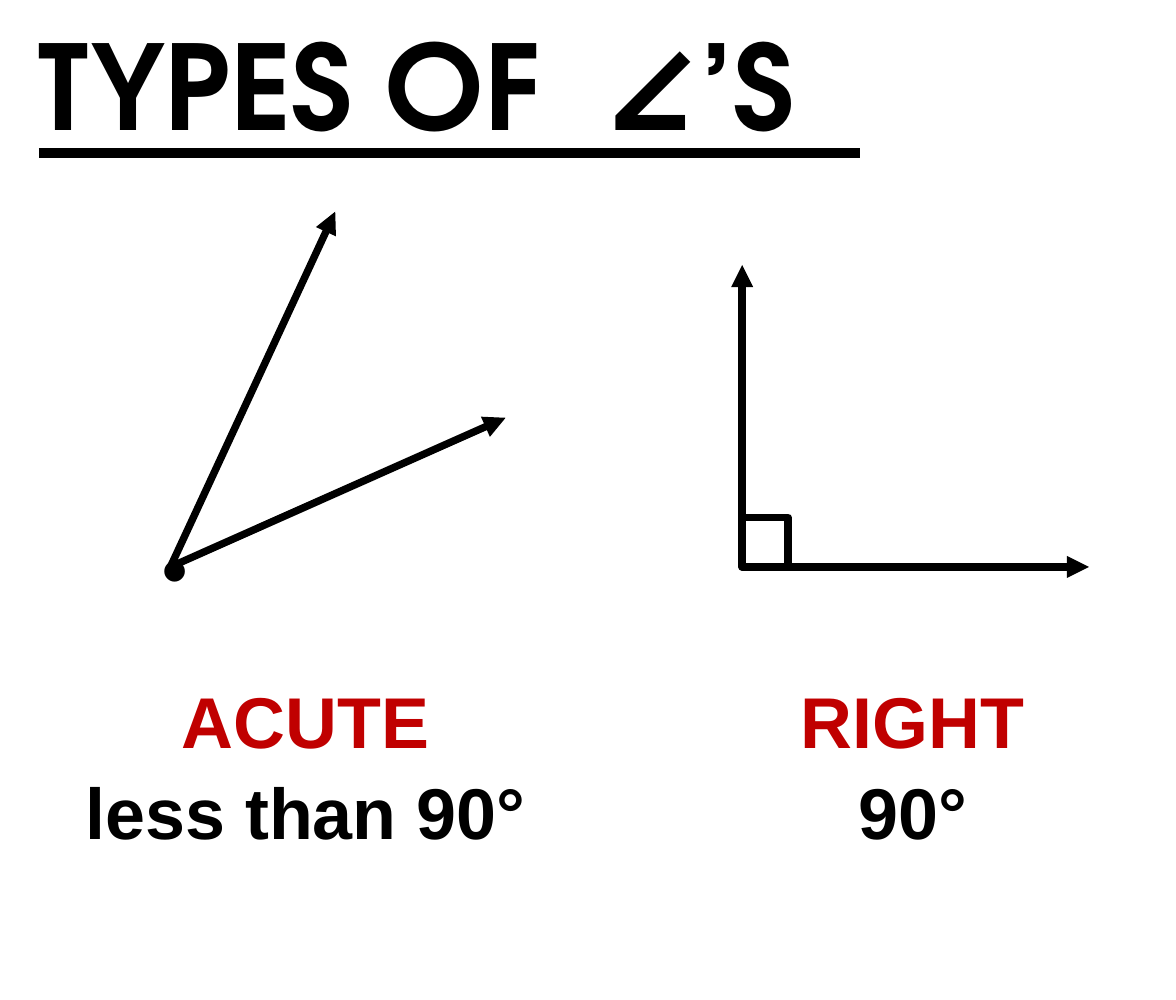
from collections import namedtuple

from lxml import etree
from pptx import Presentation
from pptx import util as u
from pptx.dml.color import RGBColor
from pptx.enum import shapes, text
from pptx.oxml.ns import qn

Box = namedtuple("Box", "left top width height")

BLACK = "000000"
RED = "C00000"
LINE_WIDTH = u.Pt(4.5)
VERTEX_DROP = 7.67  # from the top of a panel to the vertex of its angle
LABEL_DROP = 9.91   # from the top of a panel to its label
LABEL_HEIGHT = 4.01


def colour(hex_value):
    return RGBColor.from_string(hex_value)


def add_text(page, box, lines, font_name, size, wrap=False):
    """Place bold lines, given as (wording, colour) pairs, in a text box."""
    frame = page.shapes.add_textbox(*map(u.Cm, box)).text_frame
    frame.word_wrap = wrap
    for index, (wording, hex_value) in enumerate(lines):
        para = frame.paragraphs[0] if index == 0 else frame.add_paragraph()
        para.text = wording
        para.alignment = text.PP_ALIGN.CENTER
        para.space_before = u.Pt(3)
        para.font.name = font_name
        para.font.size = u.Pt(size)
        para.font.bold = True
        para.font.color.rgb = colour(hex_value)
    return frame


def add_ray(group, start, end):
    """Draw an arrow from the vertex of an angle."""
    ray = group.shapes.add_connector(
        shapes.MSO_CONNECTOR.STRAIGHT, *map(u.Cm, start + end))
    ray.line.color.rgb = colour(BLACK)
    ray.line.width = LINE_WIDTH
    properties = ray._element.spPr
    etree.SubElement(ray.line._get_or_add_ln(), qn("a:tailEnd"), type="triangle")
    etree.SubElement(properties, qn("a:effectLst"))


def add_label(page, box, name, size_of_angle):
    add_text(page, box, [(name, RED), (size_of_angle, BLACK)], "Arial", 44)


def add_title(page, box):
    # The underline runs on past the last letter
    frame = add_text(page, box, [("TYPES OF  ∠’S  ", BLACK)],
                     "TeX Gyre Adventor", 72, wrap=True)
    frame.vertical_anchor = text.MSO_ANCHOR.MIDDLE
    frame.margin_left = u.Cm(1.6)
    para = frame.paragraphs[0]
    para.alignment = text.PP_ALIGN.LEFT
    para.space_before = u.Pt(0)
    para.font.underline = True


def add_acute_angle(page, box):
    vertex_x, vertex_y = box.left + 2.13, box.top + VERTEX_DROP

    # Vertex dot
    dot = Box(vertex_x - 0.43, vertex_y - 1.06, 1.07, 2.13)
    add_text(page, dot, [("•", BLACK)], "Arial", 44)

    # Two rays
    group = page.shapes.add_group_shape()
    add_ray(group, (vertex_x, vertex_y), (box.left + 5.69, box.top))
    add_ray(group, (vertex_x, vertex_y), (box.left + 9.37, box.top + 4.45))

    label = Box(box.left, box.top + LABEL_DROP, box.width, LABEL_HEIGHT)
    add_label(page, label, "ACUTE", "less than 90°")


def add_right_angle(page, box):
    vertex_x, vertex_y = box.left, box.top + VERTEX_DROP

    # Two rays
    group = page.shapes.add_group_shape()
    add_ray(group, (vertex_x, vertex_y), (vertex_x, box.top + 1.15))
    add_ray(group, (vertex_x, vertex_y), (box.left + box.width, vertex_y))

    # Square corner mark
    corner = Box(vertex_x, vertex_y - 1.07, 0.99, 1.07)
    mark = group.shapes.add_shape(
        shapes.MSO_SHAPE.RECTANGLE, *map(u.Cm, corner))
    mark.shadow.inherit = False
    mark.fill.background()
    mark.line.color.rgb = colour(BLACK)
    mark.line.width = LINE_WIDTH

    label = Box(box.left + 0.99, box.top + LABEL_DROP, 5.38, LABEL_HEIGHT)
    add_label(page, label, "RIGHT", "90°")


def main():
    deck = Presentation()
    deck.slide_width, deck.slide_height = u.Cm(25.4), u.Cm(21.59)
    page = deck.slides.add_slide(deck.slide_layouts[6])

    add_title(page, Box(-0.76, 0, 25.35, 3.61))
    add_acute_angle(page, Box(1.55, 4.57, 10.11, 13.92))
    add_right_angle(page, Box(16.03, 4.57, 7.49, 13.92))

    deck.save("out.pptx")


if __name__ == "__main__":
    main()
